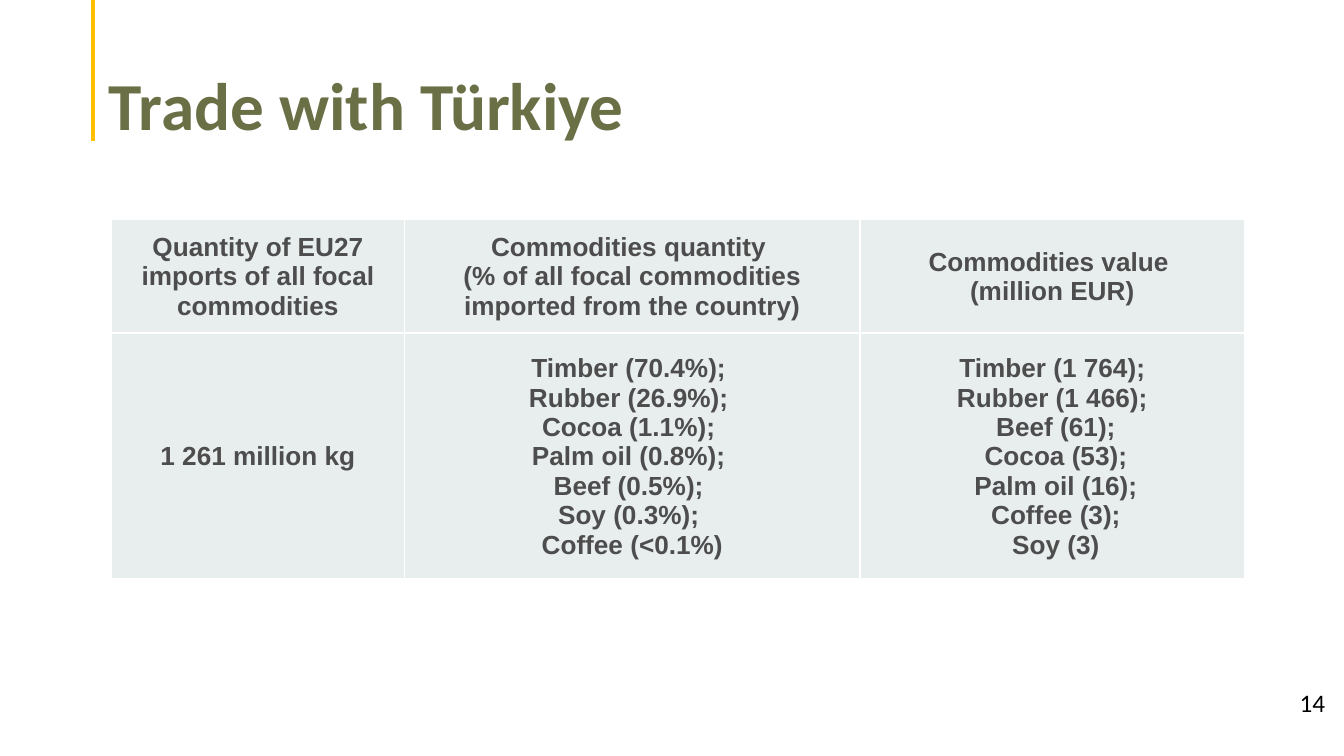
from lxml.etree import SubElement
from pptx import Presentation
from pptx.dml.color import RGBColor
from pptx.enum.shapes import MSO_CONNECTOR
from pptx.enum.text import MSO_ANCHOR, PP_ALIGN
from pptx.oxml.ns import qn
from pptx.util import Inches, Pt

TITLE = "Trade with Türkiye"
PAGE_NUMBER = "14"
ROWS = [
    [
        ["Quantity of EU27 imports of all focal commodities"],
        ["Commodities quantity ",
         "(% of all focal commodities imported from the country)"],
        ["Commodities value ", "(million EUR)"],
    ],
    [
        ["1 261 million kg"],
        ["Timber (70.4%); ", "Rubber (26.9%); ", "Cocoa (1.1%); ",
         "Palm oil (0.8%); ", "Beef (0.5%); ", "Soy (0.3%); ", "Coffee (<0.1%)"],
        ["Timber (1 764);", "Rubber (1 466);", " Beef (61);", " Cocoa (53);",
         " Palm oil (16);", " Coffee (3);", " Soy (3)"],
    ],
]
COLUMN_WIDTHS = [2.18, 3.39, 2.86]
ROW_HEIGHTS = [0.85, 1.83]


def color(value):
    return RGBColor.from_string(value)


def write(frame, lines, size, font, fill, bold=False, align=PP_ALIGN.LEFT,
          spacing=None):
    """Put one paragraph per line into a text frame."""
    frame.word_wrap = True
    for index, line in enumerate(lines):
        para = frame.paragraphs[0] if index == 0 else frame.add_paragraph()
        para.alignment = align
        para.line_spacing = spacing
        span = para.add_run()
        span.text = line
        span.font.size = Pt(size)
        span.font.name = font
        span.font.bold = bold
        span.font.color.rgb = color(fill)
        span.font._element.set("kern", "0")


def arrange(area, anchor, left, top, right, bottom):
    """Set the anchor and margins of a text frame or a table cell."""
    area.vertical_anchor = anchor
    area.margin_left, area.margin_top = Inches(left), Inches(top)
    area.margin_right, area.margin_bottom = Inches(right), Inches(bottom)


def add_borders(cell, line_color, width):
    properties = cell._tc.get_or_add_tcPr()
    for index, side in enumerate(("a:lnL", "a:lnR", "a:lnT", "a:lnB")):
        line = properties.makeelement(qn(side), {"w": str(Pt(width))})
        fill = SubElement(line, qn("a:solidFill"))
        SubElement(fill, qn("a:srgbClr"), val=line_color)
        properties.insert(index, line)


deck = Presentation()
deck.slide_width = Inches(10)
deck.slide_height = deck.slide_width * 9 // 16
page = deck.slides.add_slide(deck.slide_layouts[5])

title = page.shapes.title
title.left, title.top = Inches(0.74), Inches(0.44)
title.width, title.height = Inches(8.62), Inches(0.64)
arrange(title.text_frame, MSO_ANCHOR.BOTTOM, 0.07, 0.04, 0.07, 0)
write(title.text_frame, [TITLE], 36, "Calibri", "6A6F45", bold=True, spacing=0.9)

number_box = page.shapes.add_textbox(
    Inches(9.57), Inches(5.08), Inches(0.36), Inches(0.3))
arrange(number_box.text_frame, MSO_ANCHOR.MIDDLE, 0.07, 0.04, 0.07, 0.04)
write(number_box.text_frame, [PAGE_NUMBER], 13.5, "Calibri", "000000",
      align=PP_ALIGN.RIGHT)

accent = page.shapes.add_connector(
    MSO_CONNECTOR.STRAIGHT, Inches(0.69), 0, Inches(0.69), Inches(1.05))
accent.line.color.rgb = color("FFC000")
accent.line.width = Pt(2.25)
SubElement(accent._element.spPr, qn("a:effectLst"))

table = page.shapes.add_table(
    len(ROWS), len(COLUMN_WIDTHS), Inches(0.83), Inches(1.63),
    Inches(sum(COLUMN_WIDTHS)), Inches(sum(ROW_HEIGHTS))).table
for column, width in zip(table.columns, COLUMN_WIDTHS):
    column.width = Inches(width)
for row, height, contents in zip(table.rows, ROW_HEIGHTS, ROWS):
    row.height = Inches(height)
    for cell, lines in zip(row.cells, contents):
        arrange(cell, MSO_ANCHOR.MIDDLE, 0.01, 0.01, 0.01, 0)
        write(cell.text_frame, lines, 14, "Arial", "4D4D4D", bold=True,
              align=PP_ALIGN.CENTER)
        cell.fill.solid()
        cell.fill.fore_color.rgb = color("E8EDEE")
        add_borders(cell, "FFFFFF", 1)

deck.save("out.pptx")
